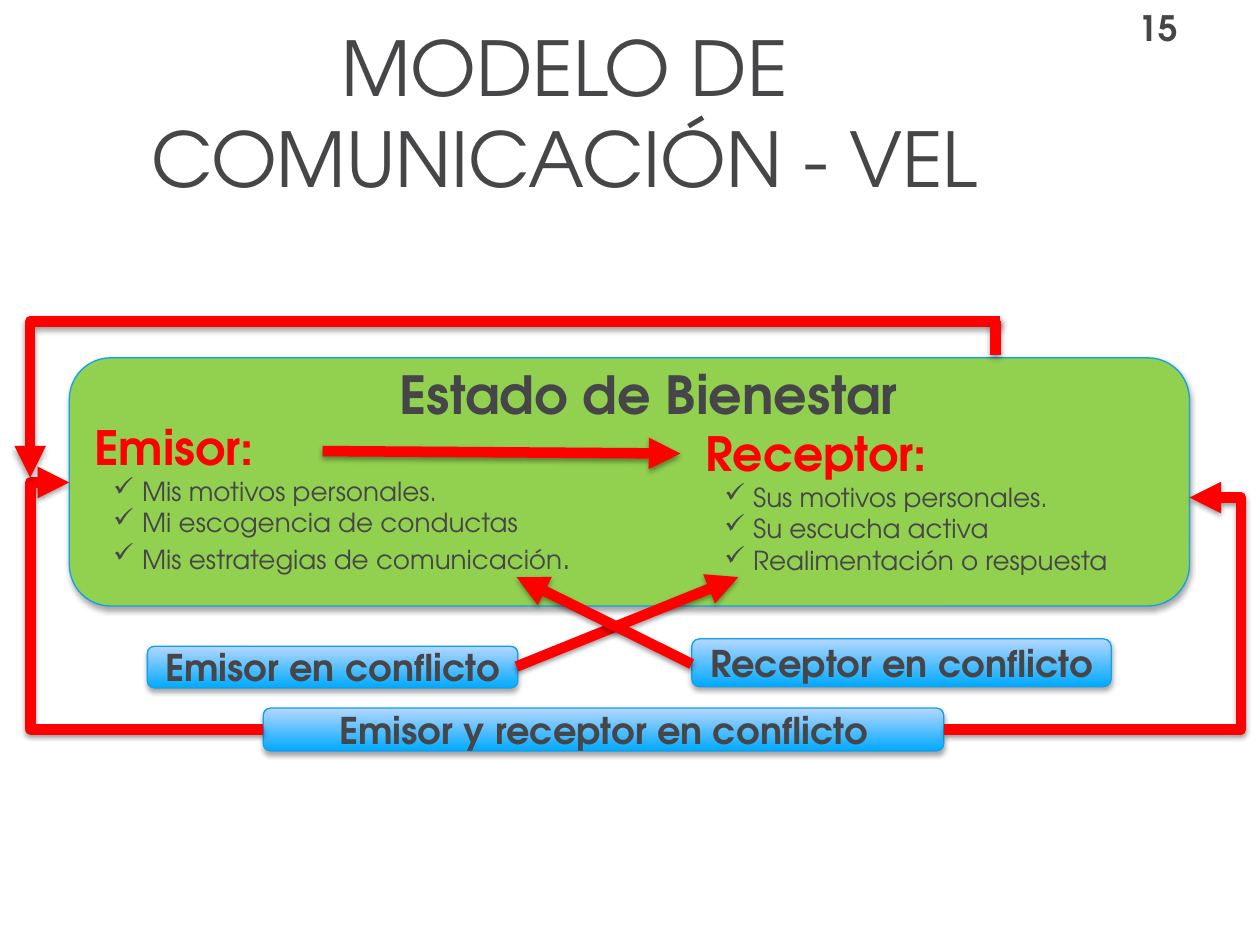
from lxml import etree
from pptx import Presentation
from pptx.dml.color import RGBColor
from pptx.enum.shapes import MSO_CONNECTOR, MSO_SHAPE
from pptx.enum.text import MSO_ANCHOR, MSO_AUTO_SIZE, PP_ALIGN
from pptx.oxml.ns import qn
from pptx.util import Inches, Pt

ROUNDED = MSO_SHAPE.ROUNDED_RECTANGLE
STRAIGHT, ELBOW = MSO_CONNECTOR.STRAIGHT, MSO_CONNECTOR.ELBOW
CENTER, JUSTIFY = PP_ALIGN.CENTER, PP_ALIGN.JUSTIFY
MIDDLE, BOTTOM = MSO_ANCHOR.MIDDLE, MSO_ANCHOR.BOTTOM
NO_FIT = MSO_AUTO_SIZE.NONE

FONT = "TeX Gyre Adventor"
COLORS = {
    "text": "464649", "red": "FF0000", "green": "92D050", "outline": "0EA1EC",
    "blue": "01A9FF", "pale": "B4D7FF", "shadow": "000000",
}


def rgb(name):
    return RGBColor.from_string(COLORS[name])


def set_font(font, size, color="text", bold=False):
    font.name = FONT
    font.size = Pt(size)
    font.bold = bold
    font.color.rgb = rgb(color)


def add_shadow(effects, distance, alpha):
    shadow = etree.SubElement(
        effects, qn("a:outerShdw"), blurRad=str(Pt(3.1)), dist=str(Pt(distance)),
        dir="5400000", rotWithShape="0")
    color = etree.SubElement(shadow, qn("a:srgbClr"), val=COLORS["shadow"])
    etree.SubElement(color, qn("a:alpha"), val=str(alpha * 1000))


def add_label(s, box, text, size, color="text", bold=True):
    tf = s.shapes.add_textbox(*map(Inches, box)).text_frame
    tf.word_wrap = True
    p = tf.paragraphs[0]
    p.text = text
    set_font(p.font, size, color, bold)
    return tf


def add_rounded(s, box):
    sp = s.shapes.add_shape(ROUNDED, *map(Inches, box))
    sp.shadow.inherit = False
    add_shadow(sp._element.spPr.find(qn("a:effectLst")), 1.8, 35)
    sp.line.color.rgb = rgb("outline")
    sp.line.width = Pt(0.75)
    return sp


def add_arrow(s, start, end, kind=STRAIGHT, bend=None, head=True):
    line = s.shapes.add_connector(kind, *map(Inches, start + end))
    line.line.color.rgb = rgb("red")
    line.line.width = Pt(6)
    sp_pr = line._element.spPr
    if head:
        etree.SubElement(sp_pr.find(qn("a:ln")), qn("a:tailEnd"), type="triangle")
    if bend is not None:
        guides = sp_pr.find(qn("a:prstGeom")).get_or_add_avLst()
        etree.SubElement(guides, qn("a:gd"), name="adj1",
                         fmla=f"val {round(bend * 100000)}")
    add_shadow(etree.SubElement(sp_pr, qn("a:effectLst")), 1.6, 38)


def add_title(s, box, text):
    title = s.shapes.title
    title.left, title.top, title.width, title.height = map(Inches, box)
    tf = title.text_frame
    tf.auto_size = NO_FIT
    tf.vertical_anchor = BOTTOM
    tf.margin_bottom = Inches(0.3)
    p = tf.paragraphs[0]
    p.text = text
    p.alignment = CENTER
    set_font(p.font, 43.2)


def add_role(s, box, heading, items):
    tf = add_label(s, box, heading, 27, "red")
    for item in items:
        p = tf.add_paragraph()
        p.text = item
        p.level = 1
        p.alignment = JUSTIFY
        p_pr = p._p.get_or_add_pPr()
        p_pr.set("marL", str(Inches(0.38)))
        p_pr.set("indent", str(Inches(-0.23)))
        etree.SubElement(p_pr, qn("a:buChar"), char="✓")
        set_font(p.font, 15)
    return tf


def add_wellbeing_panel(s, box):
    left, top, width, height = box
    panel = add_rounded(s, box)
    panel.fill.solid()
    panel.fill.fore_color.rgb = rgb("green")
    sender = add_role(
        s, (left + 0.1, top + 0.43, 4.2, 1.59), "Emisor:",
        ["Mis motivos personales.", "Mi escogencia de conductas",
         "Mis estrategias de comunicación"])
    r = sender.paragraphs[-1].add_run()
    r.text = "."
    r.font.size = Pt(18)
    add_role(
        s, (left + 4.95, top + 0.48, 3.6, 1.54), "Receptor:",
        ["Sus motivos personales.", "Su escucha activa", "Realimentación o respuesta"])
    add_label(s, (left + 2.52, top - 0.02, 4.2, 0.61), "Estado de Bienestar", 30)
    add_arrow(s, (left + 2.01, top + 0.74), (left + 4.85, top + 0.76))


def add_conflict(s, box, text):
    sp = add_rounded(s, box)
    sp.fill.gradient()
    sp.fill.gradient_angle = 90
    for stop, color in zip(sp.fill.gradient_stops, ("blue", "pale")):
        stop.color.rgb = rgb(color)
    tf = sp.text_frame
    tf.word_wrap = False
    tf.margin_top = tf.margin_bottom = 0
    tf.vertical_anchor = MIDDLE
    p = tf.paragraphs[0]
    p.text = text
    p.alignment = CENTER
    set_font(p.font, 21, bold=True)


def add_feedback_arrows(s, panel, shared):
    left, top, width, height = panel
    right = left + width
    middle = shared[1] + shared[3] / 2
    rail = left - 0.31
    add_arrow(s, (4.1, 5.29), (5.86, 4.58))
    add_arrow(s, (5.49, 5.27), (4.1, 4.58))
    add_arrow(s, (shared[0] + shared[2], middle), (right, top + 1.11), ELBOW, 1.21)
    add_arrow(s, (shared[0], middle), (left, top + 0.99), ELBOW, 1.2)
    add_arrow(s, (7.94, top - 0.29), (rail, top + 0.95), ELBOW, 1)
    add_arrow(s, (7.9, top - 0.29), (7.9, top - 0.02), head=False)


def main():
    prs = Presentation()
    prs.slide_width, prs.slide_height = Inches(10), Inches(7.5)
    s = prs.slides.add_slide(prs.slide_layouts[0])
    subtitle = s.placeholders[1]._element
    subtitle.getparent().remove(subtitle)

    panel = (0.55, 2.84, 8.89, 1.97)
    shared = (2.09, 5.62, 5.4, 0.34)
    add_label(s, (8.94, 0, 0.94, 0.44), "15", 20)
    add_title(s, (0.49, 0.58, 7.98, 1.33), "MODELO DE COMUNICACIÓN - VEL")
    add_wellbeing_panel(s, panel)
    add_conflict(s, (1.17, 5.13, 2.94, 0.33), "Emisor en conflicto")
    add_conflict(s, (5.49, 5.07, 3.33, 0.38), "Receptor en conflicto")
    add_conflict(s, shared, "Emisor y receptor en conflicto")
    add_feedback_arrows(s, panel, shared)
    prs.save("out.pptx")


if __name__ == "__main__":
    main()
